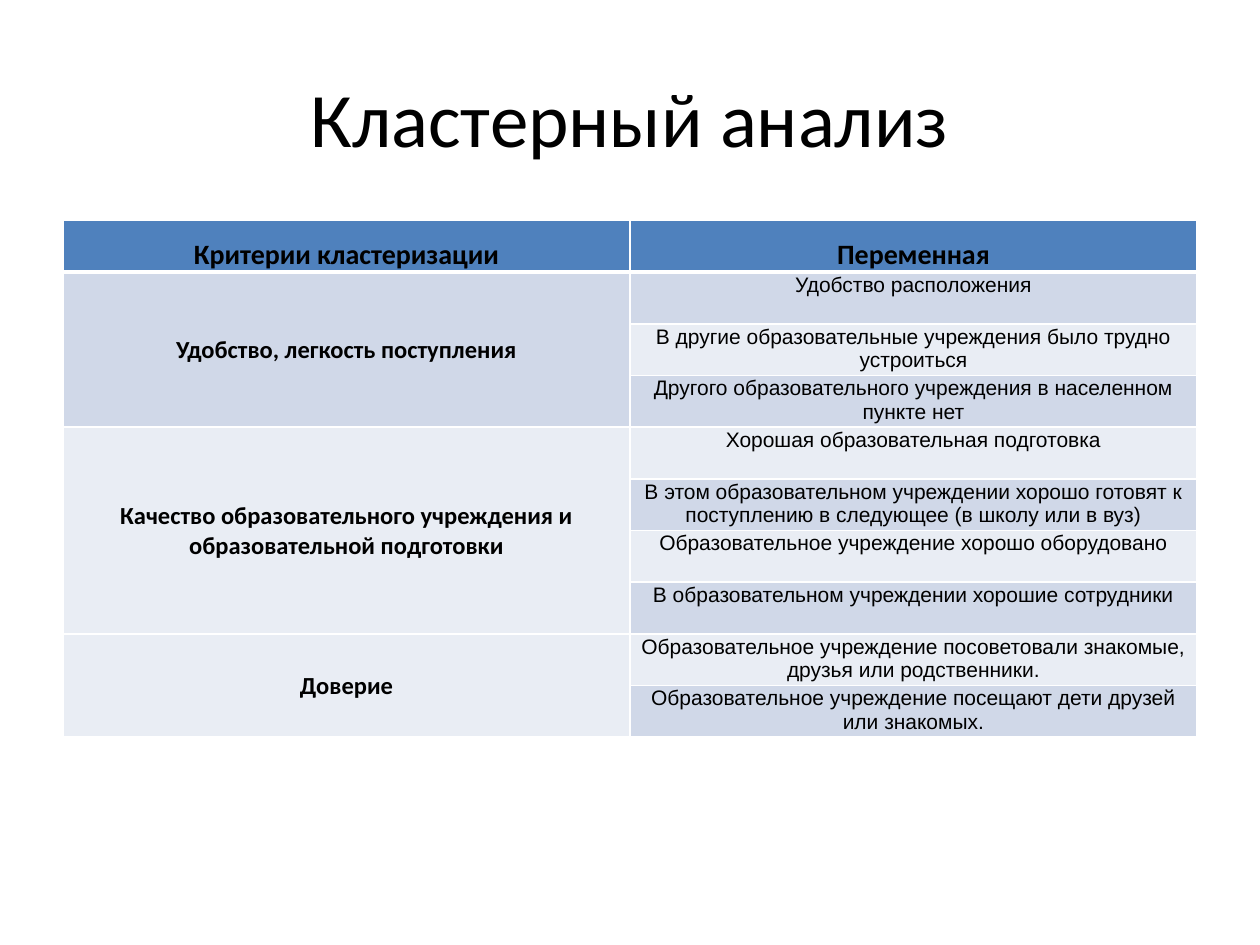
from lxml import etree
from pptx import Presentation
from pptx.dml.color import RGBColor
from pptx.enum.text import MSO_ANCHOR, PP_ALIGN
from pptx.oxml.ns import qn
from pptx.util import Inches, Pt

TOP, MIDDLE, BOTTOM = MSO_ANCHOR.TOP, MSO_ANCHOR.MIDDLE, MSO_ANCHOR.BOTTOM
CENTER = PP_ALIGN.CENTER

BLACK = RGBColor(0x00, 0x00, 0x00)
WHITE = RGBColor(0xFF, 0xFF, 0xFF)
BLUE = RGBColor(0x4F, 0x81, 0xBD)
DARK = RGBColor(0xD0, 0xD8, 0xE8)
LIGHT = RGBColor(0xE9, 0xED, 0xF4)

# Content
TITLE = "Кластерный анализ"
HEADS = ["Критерии кластеризации", "Переменная"]
GROUPS = [
    ("Удобство, легкость поступления", [
        "Удобство расположения",
        "В другие образовательные учреждения было трудно устроиться",
        "Другого образовательного учреждения в населенном пункте нет",
    ]),
    ("Качество образовательного учреждения и образовательной подготовки", [
        "Хорошая образовательная подготовка",
        "В этом образовательном учреждении хорошо готовят к поступлению "
        "в следующее (в школу или в вуз)",
        "Образовательное учреждение хорошо оборудовано",
        "В образовательном учреждении хорошие сотрудники",
    ]),
    ("Доверие", [
        "Образовательное учреждение посоветовали знакомые, друзья или "
        "родственники.",
        "Образовательное учреждение посещают дети друзей или знакомых.",
    ]),
]
LEFT, WIDTH, ROW = 0.5, 9, 0.41


def write(frame, text, size, font="Calibri", bold=False):
    frame.text = text
    para = frame.paragraphs[0]
    para.alignment = CENTER
    face = para.runs[0].font
    face.size, face.name, face.bold = Pt(size), font, bold
    face.color.rgb = BLACK


def style(cell, fill, anchor, top=1, bottom=1):
    """Set borders, fill, margins and anchor of a cell."""
    props = cell._tc.get_or_add_tcPr()
    for side, width in zip("LRTB", (1, 1, top, bottom)):
        line = etree.SubElement(props, qn(f"a:ln{side}"), w=str(Pt(width)))
        paint = etree.SubElement(line, qn("a:solidFill"))
        etree.SubElement(paint, qn("a:srgbClr"), val=str(WHITE))
    cell.fill.solid()
    cell.fill.fore_color.rgb = fill
    cell.margin_left = cell.margin_right = cell.margin_top = Inches(0.01)
    cell.margin_bottom = 0
    cell.vertical_anchor = anchor


prs = Presentation()
prs.slide_width, prs.slide_height = Inches(10), Inches(7.5)
slide = prs.slides.add_slide(prs.slide_layouts[6])

# Title
box = slide.shapes.add_textbox(Inches(LEFT), Inches(0.3), Inches(WIDTH), Inches(1.25))
box.text_frame.word_wrap = True
box.text_frame.vertical_anchor = MIDDLE
write(box.text_frame, TITLE, 44)

# Table
count = 1 + sum(len(items) for _, items in GROUPS)
table = slide.shapes.add_table(
    count, 2, Inches(LEFT), Inches(1.75), Inches(WIDTH), Inches(ROW * count)).table
for row in table.rows:
    row.height = Inches(ROW)

# Header row
for col, head in enumerate(HEADS):
    cell = table.cell(0, col)
    style(cell, BLUE, BOTTOM, bottom=3)
    write(cell.text_frame, head, 16, bold=True)

# Each criterion spans the rows of its variables
first = 1
for name, items in GROUPS:
    shade = DARK if first % 2 else LIGHT
    for row, item in enumerate(items, first):
        edge = 3 if row == 1 else 1
        style(table.cell(row, 0), shade, MIDDLE, top=edge)
        cell = table.cell(row, 1)
        style(cell, DARK if row % 2 else LIGHT, TOP, top=edge)
        write(cell.text_frame, item, 12, "Arial")
    lead = table.cell(first, 0)
    lead.merge(table.cell(first + len(items) - 1, 0))
    write(lead.text_frame, name, 14, bold=True)
    first += len(items)

prs.save("out.pptx")
